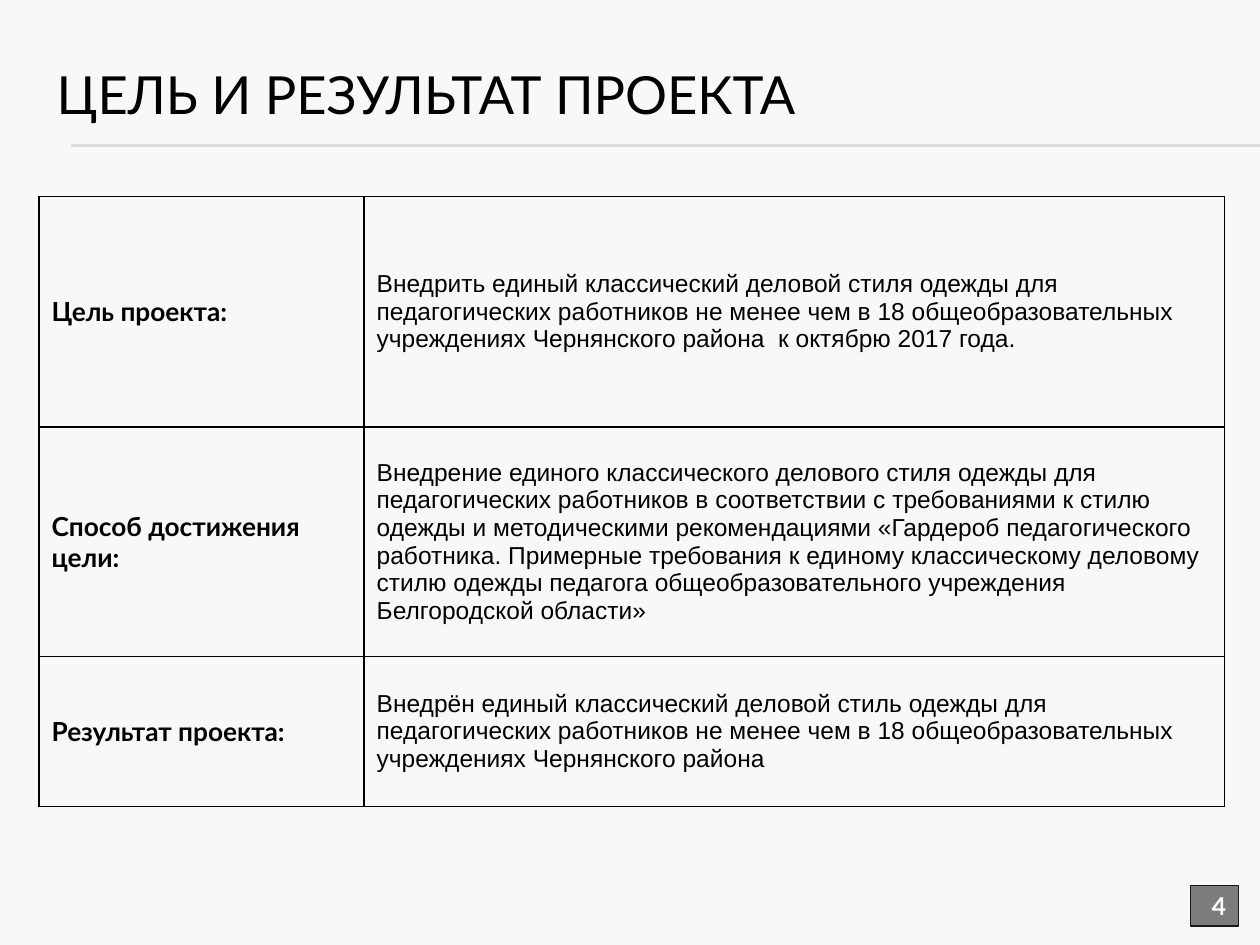
"""Build the slide on the goal and result of the project."""
from typing import NamedTuple

from lxml import etree
from pptx import Presentation
from pptx.dml.color import RGBColor
from pptx.enum import shapes, text
from pptx.oxml import ns
from pptx.util import Inches, Pt

BLACK = RGBColor(0x00, 0x00, 0x00)
WHITE = RGBColor(0xFF, 0xFF, 0xFF)
PAPER = RGBColor(0xF8, 0xF8, 0xF8)
RULE = RGBColor(0xDD, 0xDD, 0xDD)
BADGE = RGBColor(0x7C, 0x7C, 0x7C)
BADGE_EDGE = RGBColor(0x19, 0x19, 0x19)


class Entry(NamedTuple):
    label: str
    detail: str
    height: float


ENTRIES = [
    Entry(
        "Цель проекта:",
        "Внедрить единый классический деловой стиля одежды для педагогических "
        "работников не менее чем в 18 общеобразовательных учреждениях "
        "Чернянского района  к октябрю 2017 года.",
        1.83,
    ),
    Entry(
        "Способ достижения цели:",
        "Внедрение единого классического делового стиля одежды для педагогических "
        "работников в соответствии с требованиями к стилю одежды и методическими "
        "рекомендациями «Гардероб педагогического работника. Примерные требования "
        "к единому классическому деловому стилю одежды педагога "
        "общеобразовательного учреждения Белгородской области»",
        1.82,
    ),
    Entry(
        "Результат проекта:",
        "Внедрён единый классический деловой стиль одежды для педагогических "
        "работников не менее чем в 18 общеобразовательных учреждениях "
        "Чернянского района",
        1.19,
    ),
]
COLUMN_WIDTHS = (2.58, 6.83)


def set_font(para, name: str, size: float, color: RGBColor, bold: bool = False) -> None:
    font = para.font
    font.name, font.size, font.bold = name, Pt(size), bold
    font.color.rgb = color


def add_rule(page, top: float) -> None:
    line = page.shapes.add_connector(
        shapes.MSO_CONNECTOR.STRAIGHT, Inches(0.56), Inches(top), Inches(10), Inches(top)
    )
    line.line.color.rgb = RULE
    line.line.width = Pt(0.75)
    etree.SubElement(line._element.spPr, ns.qn("a:effectLst"))


def add_borders(cell) -> None:
    properties = cell._tc.get_or_add_tcPr()
    for index, side in enumerate(("lnL", "lnR", "lnT", "lnB")):
        border = etree.Element(ns.qn(f"a:{side}"), w=str(Pt(1)))
        fill = etree.SubElement(border, ns.qn("a:solidFill"))
        etree.SubElement(fill, ns.qn("a:srgbClr"), val=str(BLACK))
        properties.insert(index, border)


def fill_cell(cell, words: str, font: str, size: float, bold: bool) -> None:
    cell.text = words
    cell.vertical_anchor = text.MSO_ANCHOR.MIDDLE
    cell.fill.background()
    set_font(cell.text_frame.paragraphs[0], font, size, BLACK, bold)
    add_borders(cell)


def add_title(page) -> None:
    title = page.shapes.title
    title.left, title.top = Inches(0.35), Inches(0.28)
    title.width, title.height = Inches(9.5), Inches(0.92)
    title.text = "ЦЕЛЬ И РЕЗУЛЬТАТ ПРОЕКТА"
    title.text_frame.vertical_anchor = text.MSO_ANCHOR.MIDDLE
    para = title.text_frame.paragraphs[0]
    para.alignment = text.PP_ALIGN.LEFT
    set_font(para, "Lato", 30, BLACK)


def add_entries(page) -> None:
    height = sum(entry.height for entry in ENTRIES)
    table = page.shapes.add_table(
        len(ENTRIES), len(COLUMN_WIDTHS),
        Inches(0.31), Inches(1.56), Inches(sum(COLUMN_WIDTHS)), Inches(height),
    ).table
    table.first_row = table.horz_banding = False
    for column, width in zip(table.columns, COLUMN_WIDTHS):
        column.width = Inches(width)
    for row, entry in zip(table.rows, ENTRIES):
        row.height = Inches(entry.height)
        fill_cell(row.cells[0], entry.label, "Lato", 15, True)
        fill_cell(row.cells[1], entry.detail, "Arial", 14, False)


def add_page_number(page) -> None:
    box = page.shapes.add_shape(
        shapes.MSO_SHAPE.RECTANGLE, Inches(9.45), Inches(7.03), Inches(0.38), Inches(0.32)
    )
    box.shadow.inherit = False
    box.fill.solid()
    box.fill.fore_color.rgb = BADGE
    box.line.color.rgb = BADGE_EDGE
    box.line.width = Pt(0.75)
    box.text_frame.text = "4"
    box.text_frame.vertical_anchor = text.MSO_ANCHOR.MIDDLE
    para = box.text_frame.paragraphs[0]
    para.alignment = text.PP_ALIGN.RIGHT
    set_font(para, "Lato", 14, WHITE, True)


def main() -> None:
    deck = Presentation()
    deck.slide_width, deck.slide_height = Inches(10), Inches(7.5)
    page = deck.slides.add_slide(deck.slide_layouts.get_by_name("Title Only"))
    page.background.fill.solid()
    page.background.fill.fore_color.rgb = PAPER
    for top in (1.15, 1.16):
        add_rule(page, top)
    add_title(page)
    add_entries(page)
    add_page_number(page)
    deck.save("out.pptx")


if __name__ == "__main__":
    main()
